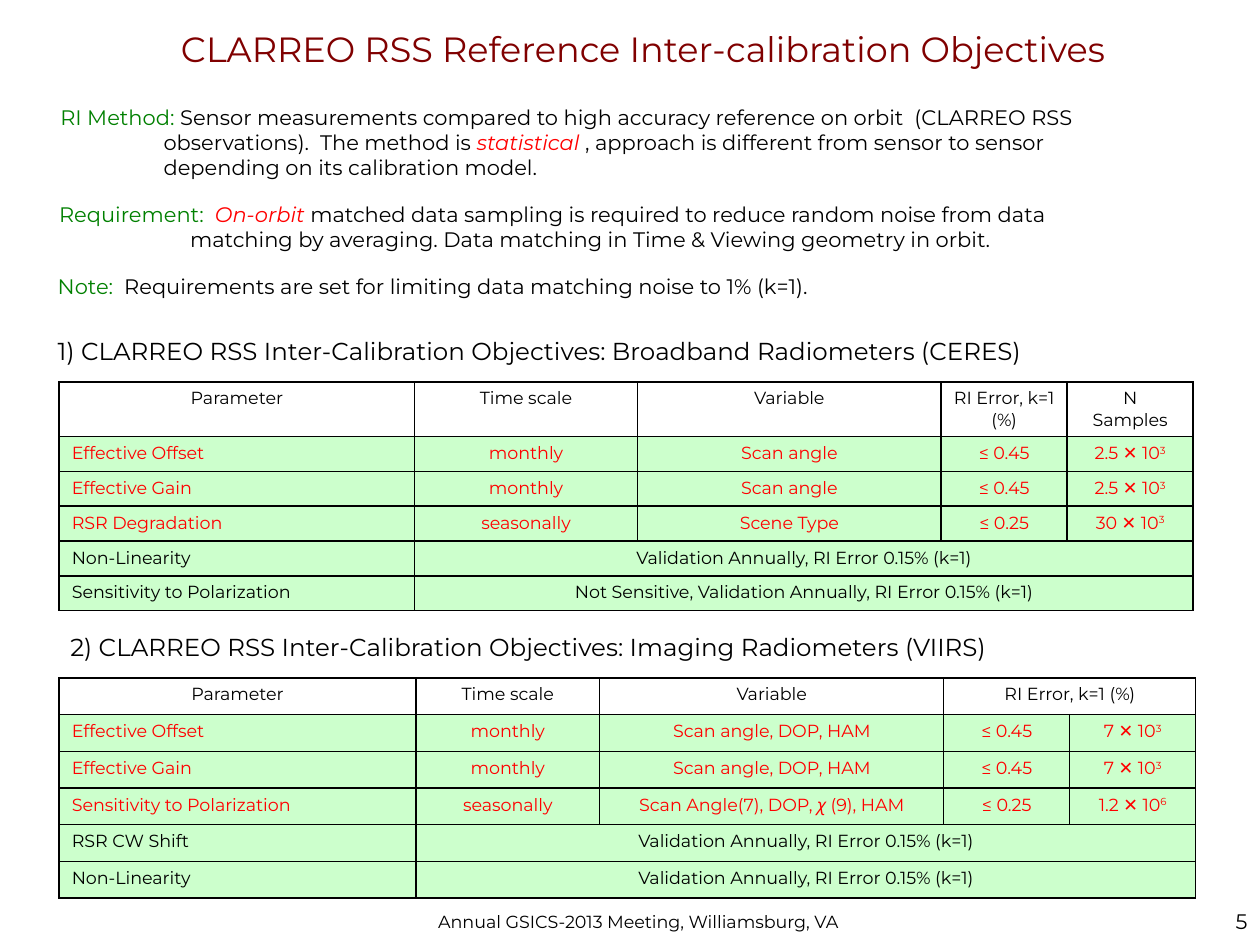
from dataclasses import dataclass

from lxml.etree import SubElement
from pptx import Presentation
from pptx.dml.color import RGBColor
from pptx.enum.text import MSO_ANCHOR, MSO_AUTO_SIZE, PP_ALIGN
from pptx.oxml.ns import qn
from pptx.util import Inches, Pt


@dataclass(frozen=True)
class Theme:
    """Colours, fonts and type sizes of the slide."""
    font: str = "Montserrat"
    symbol_font: str = "Arial"
    title: str = "800000"
    label: str = "008000"
    accent: str = "FF0000"
    ink: str = "000000"
    header_fill: str = "FFFFFF"
    body_fill: str = "CCFFCC"
    title_size: int = 20
    heading_size: int = 14
    body_size: int = 12
    table_size: int = 10
    border: int = 1


@dataclass(frozen=True)
class Span:
    """A piece of text with what sets it apart from its paragraph."""
    text: str
    color: str = ""
    italic: bool = False
    font: str = ""
    raised: bool = False


THEME = Theme()


def samples(factor, exponent):
    """Return the spans of a sample count in powers of ten."""
    return [Span(f"{factor} "), Span("✕", font=THEME.symbol_font),
            Span(" 10"), Span(exponent, raised=True)]


class SlideBuilder:
    """Holds the theme and the current slide and adds elements to it."""

    def __init__(self, theme, page):
        self.theme = theme
        self.page = page

    def fill_paragraph(self, paragraph, spans, size, color, align=PP_ALIGN.LEFT):
        """Fill a paragraph with spans; a newline span breaks the line."""
        paragraph.alignment = align
        font = paragraph.font
        font.name, font.size = self.theme.font, Pt(size)
        font.color.rgb = RGBColor.from_string(color)
        for span in [Span(spans)] if isinstance(spans, str) else spans:
            if span.text == "\n":
                paragraph.add_line_break()
                continue
            run = paragraph.add_run()
            run.text = span.text
            if span.color:
                run.font.color.rgb = RGBColor.from_string(span.color)
            if span.italic:
                run.font.italic = True
            if span.font:
                run.font.name = span.font
            if span.raised:
                run.font._element.set("baseline", "30000")

    def title(self, text, left, top, width, height):
        """Place and fill the title placeholder."""
        box = self.page.shapes.title
        box.left, box.top = Inches(left), Inches(top)
        box.width, box.height = Inches(width), Inches(height)
        frame = box.text_frame
        frame.vertical_anchor = MSO_ANCHOR.TOP
        frame.auto_size = MSO_AUTO_SIZE.NONE
        self.fill_paragraph(frame.paragraphs[0], text, self.theme.title_size,
                            self.theme.title, PP_ALIGN.CENTER)

    def text(self, spans, left, top, width, height, size,
             align=PP_ALIGN.LEFT, hanging=0, margin=None):
        """Add a text box with one paragraph."""
        box = self.page.shapes.add_textbox(
            Inches(left), Inches(top), Inches(width), Inches(height))
        frame = box.text_frame
        frame.word_wrap = True
        if margin is not None:
            frame.margin_left = frame.margin_right = Inches(margin)
            frame.margin_top = frame.margin_bottom = Inches(margin)
        paragraph = frame.paragraphs[0]
        if hanging:
            properties = paragraph._p.get_or_add_pPr()
            properties.set("marL", str(Inches(hanging)))
            properties.set("indent", str(-Inches(hanging)))
        self.fill_paragraph(paragraph, spans, size, self.theme.ink, align)

    def style_cell(self, cell, fill):
        """Give a cell its borders and fill."""
        properties = cell._tc.get_or_add_tcPr()
        for side in ("lnL", "lnR", "lnT", "lnB"):
            line = SubElement(properties, qn(f"a:{side}"),
                              w=str(Pt(self.theme.border)))
            paint = SubElement(line, qn("a:solidFill"))
            SubElement(paint, qn("a:srgbClr"), val=self.theme.ink)
        cell.fill.solid()
        cell.fill.fore_color.rgb = RGBColor.from_string(fill)

    def table(self, rows, widths, left, top, height):
        """Add a table; the last cell of a short row spans the rest."""
        theme, last = self.theme, len(widths) - 1
        table = self.page.shapes.add_table(
            len(rows), len(widths), Inches(left), Inches(top),
            Inches(sum(widths)), Inches(height)).table
        table.first_row = table.horz_banding = False
        for column, width in zip(table.columns, widths):
            column.width = Inches(width)
        for index, row in enumerate(rows):
            header, short = index == 0, len(row) <= last
            for cell in table.rows[index].cells:
                self.style_cell(cell, theme.header_fill if header else theme.body_fill)
            if short:
                table.cell(index, len(row) - 1).merge(table.cell(index, last))
            color = theme.ink if header or short else theme.accent
            for position, content in enumerate(row):
                frame = table.cell(index, position).text_frame
                left_aligned = position == 0 and not header
                align = PP_ALIGN.LEFT if left_aligned else PP_ALIGN.CENTER
                lines = content.split("\n") if isinstance(content, str) else [content]
                for number, line in enumerate(lines):
                    paragraph = frame.add_paragraph() if number else frame.paragraphs[0]
                    self.fill_paragraph(paragraph, line, theme.table_size, color, align)


def main():
    """Build the deck and save it."""
    deck = Presentation()
    deck.slide_width, deck.slide_height = Inches(10), Inches(7.5)
    slide = SlideBuilder(THEME, deck.slides.add_slide(deck.slide_layouts[5]))
    label, accent = THEME.label, THEME.accent
    line_break = Span("\n")

    slide.title("CLARREO RSS Reference Inter-calibration Objectives", 0.69, 0.17, 8.83, 0.58)
    slide.text([
        Span("RI Method: ", label),
        Span("Sensor measurements compared to high accuracy reference on orbit  (CLARREO RSS"),
        line_break,
        Span("observations).  The method is "),
        Span("statistical", accent, italic=True),
        Span(" , approach is different from sensor to sensor"),
        line_break,
        Span("depending on its calibration model."),
    ], 0.38, 0.78, 9.29, 0.75, THEME.body_size, hanging=0.82)
    slide.text([
        Span("Requirement:  ", label),
        Span("On-orbit ", accent, italic=True),
        Span("matched data sampling is required to reduce random noise from data"),
        line_break,
        Span("matching by averaging. Data matching in Time & Viewing geometry in orbit."),
    ], 0.37, 1.55, 8.85, 0.53, THEME.body_size, hanging=1.04)
    slide.text([
        Span("Note:", label),
        Span("  Requirements are set for limiting data matching noise to 1% (k=1)."),
    ], 0.36, 2.12, 9.1, 0.42, THEME.body_size)

    validation = "Validation Annually, RI Error 0.15% (k=1)"
    slide.text("1) CLARREO RSS Inter-Calibration Objectives: Broadband Radiometers (CERES)",
               0.36, 2.62, 8.72, 0.34, THEME.heading_size)
    slide.table([
        ["Parameter", "Time scale", "Variable", "RI Error, k=1 (%)", "N\nSamples"],
        ["Effective Offset", "monthly", "Scan angle", "≤ 0.45", samples("2.5", "3")],
        ["Effective Gain", "monthly", "Scan angle", "≤ 0.45", samples("2.5", "3")],
        ["RSR Degradation", "seasonally", "Scene Type", "≤ 0.25", samples("30", "3")],
        ["Non-Linearity", validation],
        ["Sensitivity to Polarization", f"Not Sensitive, {validation}"],
    ], [2.82, 1.77, 2.41, 1, 1], 0.47, 3.03, 1.66)

    slide.text("2) CLARREO RSS Inter-Calibration Objectives: Imaging Radiometers (VIIRS)",
               0.46, 4.97, 8.3, 0.34, THEME.heading_size)
    polarization = [Span("Scan Angle(7), DOP, "), Span("χ ", italic=True), Span("(9), HAM")]
    slide.table([
        ["Parameter", "Time scale", "Variable", "RI Error, k=1 (%)"],
        ["Effective Offset", "monthly", "Scan angle, DOP, HAM", "≤ 0.45", samples("7", "3")],
        ["Effective Gain", "monthly", "Scan angle, DOP, HAM", "≤ 0.45", samples("7", "3")],
        ["Sensitivity to Polarization", "seasonally", polarization, "≤ 0.25", samples("1.2", "6")],
        ["RSR CW Shift", validation],
        ["Non-Linearity", validation],
    ], [2.83, 1.46, 2.73, 1, 1], 0.47, 5.38, 1.75)

    slide.text("Annual GSICS-2013 Meeting, Williamsburg, VA", 3.38, 7.18, 3.74, 0.27,
               THEME.table_size)
    slide.text("5", 9.68, 7.21, 0.22, 0.2, THEME.body_size, PP_ALIGN.RIGHT, margin=0)
    deck.save("out.pptx")


if __name__ == "__main__":
    main()
